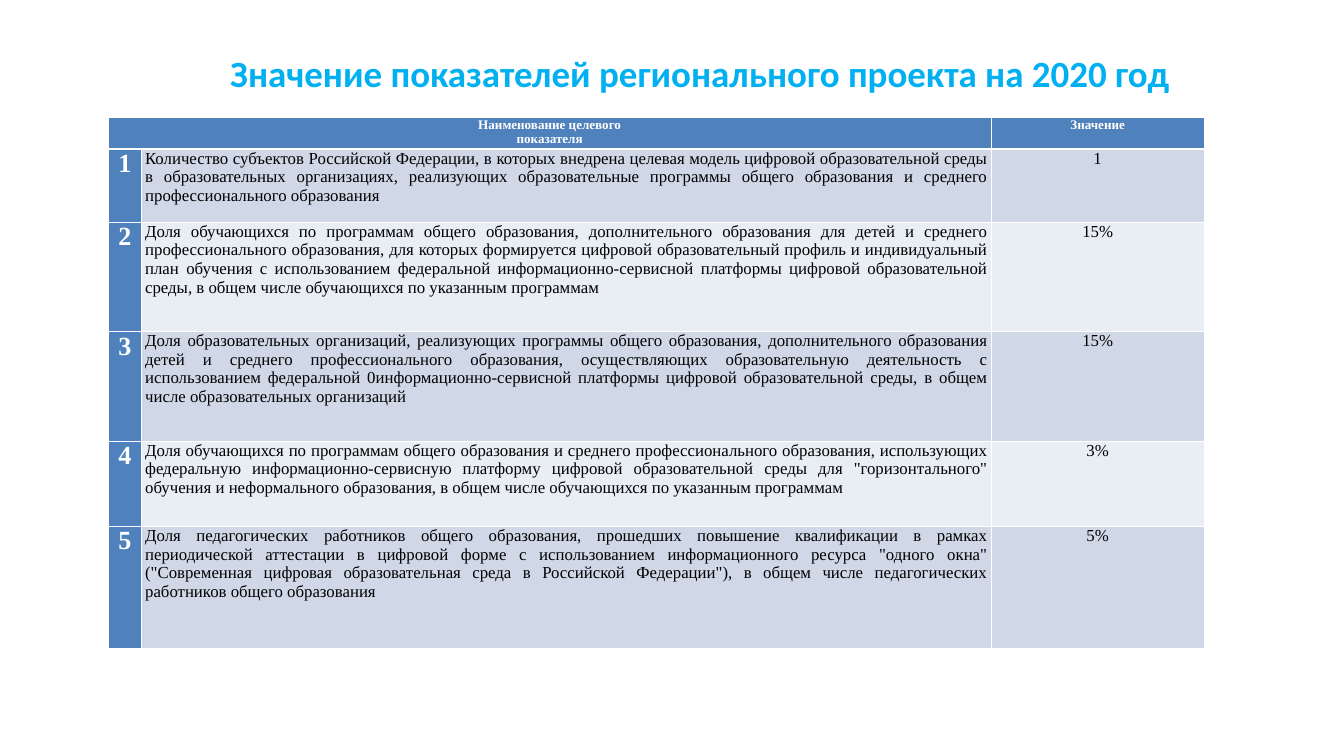
import pptx
import pptx.util
import pptx.dml.color
import pptx.enum.text
from lxml import etree

RGB = pptx.dml.color.RGBColor
ALIGN = pptx.enum.text.PP_ALIGN
ANCHOR = pptx.enum.text.MSO_ANCHOR
WHITE = RGB(0xFF, 0xFF, 0xFF)
BLACK = RGB(0x00, 0x00, 0x00)
SKY = RGB(0x00, 0xB0, 0xF0)
BLUE = RGB(0x4F, 0x81, 0xBD)
BANDS = [RGB(0xD0, 0xD8, 0xE8), RGB(0xE9, 0xED, 0xF4)]
SCALE = 9144
WIDTHS = [50, 1264, 317]
HEIGHTS = [45, 109, 163, 163, 127, 181]
ROWS = [
    ("Количество субъектов Российской Федерации, в которых внедрена целевая модель цифровой образовательной среды в образовательных организациях, реализующих образовательные программы общего образования и среднего профессионального образования", "1"),
    ("Доля обучающихся по программам общего образования, дополнительного образования для детей и среднего профессионального образования, для которых формируется цифровой образовательный профиль и индивидуальный план обучения с использованием федеральной информационно-сервисной платформы цифровой образовательной среды, в общем числе обучающихся по указанным программам", "15%"),
    ("Доля образовательных организаций, реализующих программы общего образования, дополнительного образования детей и среднего профессионального образования, осуществляющих образовательную деятельность с использованием федеральной 0информационно-сервисной платформы цифровой образовательной среды, в общем числе образовательных организаций", "15%"),
    ("Доля обучающихся по программам общего образования и среднего профессионального образования, использующих федеральную информационно-сервисную платформу цифровой образовательной среды для \"горизонтального\" обучения и неформального образования, в общем числе обучающихся по указанным программам", "3%"),
    ("Доля педагогических работников общего образования, прошедших повышение квалификации в рамках периодической аттестации в цифровой форме с использованием информационного ресурса \"одного окна\" (\"Современная цифровая образовательная среда в Российской Федерации\"), в общем числе педагогических работников общего образования", "5%"),
]


def px(size):
    return pptx.util.Emu(size * SCALE)


def put_text(frame, text, size=18, color=BLACK, bold=False,
             align=ALIGN.CENTER, face="Times New Roman"):
    for i, line in enumerate(text.split("\n")):
        par = frame.add_paragraph() if i else frame.paragraphs[0]
        par.alignment = align
        run = par.add_run()
        run.text = line
        font = run.font
        font.name = face
        font.size = pptx.util.Pt(size)
        font.bold = bold
        font.color.rgb = color


def add_edge(cell, side, width):
    props = cell._tc.get_or_add_tcPr()
    tag = pptx.oxml.ns.qn
    line = etree.SubElement(props, tag(f"a:ln{side}"), w=str(pptx.util.Pt(width)))
    fill = etree.SubElement(line, tag("a:solidFill"))
    etree.SubElement(fill, tag("a:srgbClr"), val=str(WHITE))


def style_cell(cell, row, color):
    cell.margin_left = cell.margin_right = px(5)
    cell.margin_top = cell.margin_bottom = 0
    for side in "LRTB":
        thick = (row, side) in [(0, "B"), (1, "T")]
        add_edge(cell, side, 3 if thick else 1)
    cell.fill.solid()
    cell.fill.fore_color.rgb = color


def add_title(slide, text):
    box = slide.shapes.add_textbox(px(292), px(79), px(1500), px(58))
    frame = box.text_frame
    frame.word_wrap = True
    frame.vertical_anchor = ANCHOR.MIDDLE
    put_text(frame, text, size=39.6, color=SKY, bold=True, face="Calibri")


def add_grid(slide):
    grid = slide.shapes.add_table(
        len(HEIGHTS), len(WIDTHS), px(161), px(175),
        px(sum(WIDTHS)), px(sum(HEIGHTS))).table
    for col, width in zip(grid.columns, WIDTHS):
        col.width = px(width)
    for row, height in zip(grid.rows, HEIGHTS):
        row.height = px(height)
    for r in range(len(HEIGHTS)):
        for c in range(len(WIDTHS)):
            color = BLUE if r == 0 or c == 0 else BANDS[(r - 1) % 2]
            style_cell(grid.cell(r, c), r, color)
    grid.cell(0, 0).merge(grid.cell(0, 1))
    for c, text in [(0, "Наименование целевого\nпоказателя"), (2, "Значение")]:
        put_text(grid.cell(0, c).text_frame, text, size=14, color=WHITE, bold=True)
    for r, (goal, value) in enumerate(ROWS, 1):
        num, name, mark = [grid.cell(r, c).text_frame for c in range(3)]
        put_text(num, str(r), size=28, color=WHITE, bold=True)
        put_text(name, goal, align=ALIGN.JUSTIFY)
        put_text(mark, value)


def main():
    deck = pptx.Presentation()
    deck.slide_width = px(2000)
    deck.slide_height = px(1125)
    slide = deck.slides.add_slide(deck.slide_layouts[6])
    add_title(slide, "Значение показателей регионального проекта на 2020 год")
    add_grid(slide)
    deck.save("out.pptx")


if __name__ == "__main__":
    main()
